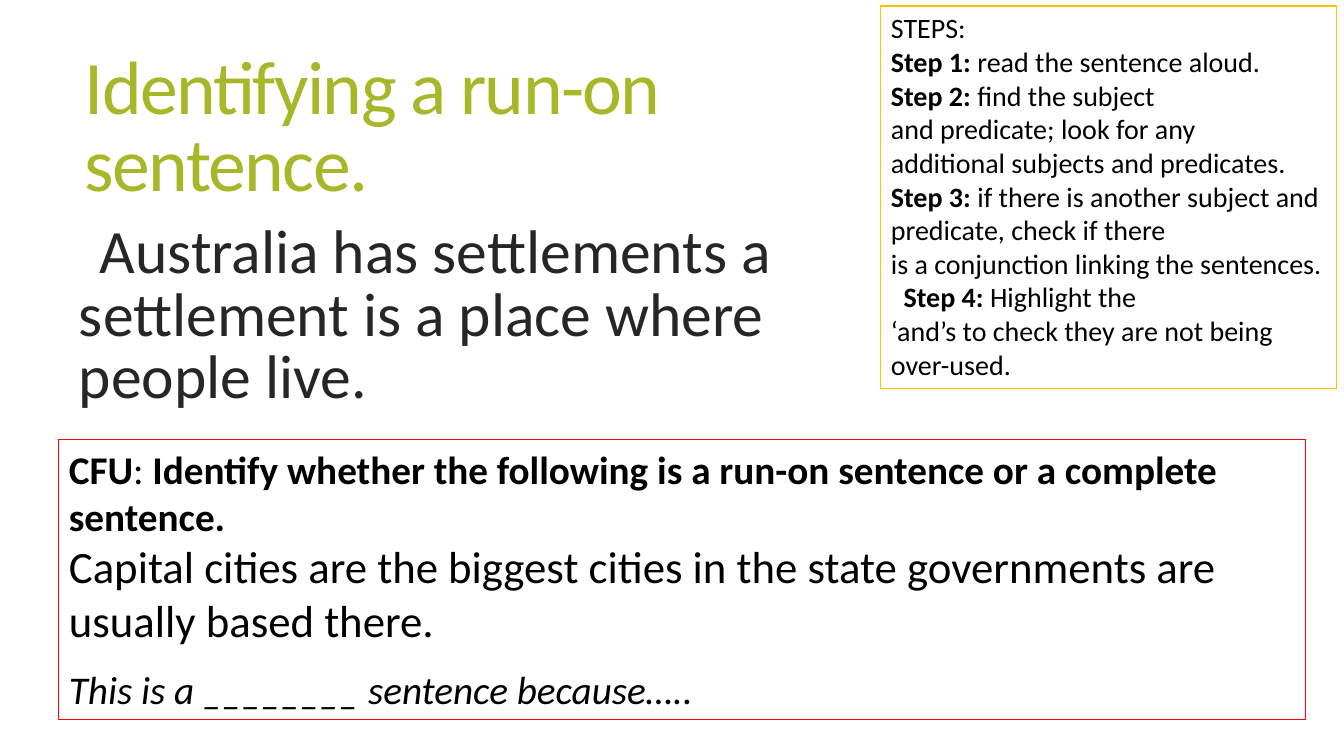
from lxml import etree
from pptx import Presentation
from pptx import util as u
from pptx.dml.color import RGBColor
from pptx.enum import shapes, text
from pptx.oxml import ns

PX = 914400 / 100.8
FONT = "Calibri"
NBSP = chr(160)
GREEN = RGBColor(0xA6, 0xB7, 0x27)
DARK = RGBColor(0x26, 0x26, 0x26)
BLACK = RGBColor(0x00, 0x00, 0x00)
AMBER = RGBColor(0xFF, 0xC0, 0x00)
RED = RGBColor(0xFF, 0x00, 0x00)

STEPS = [
    [("STEPS:", False)],
    [("Step 1:~", True), ("read the sentence aloud.~~", False)],
    [("Step 2:~", True),
     ("find the subject and~predicate;~look for~any additional~subjects and~predicates.~~", False)],
    [("Step~3:~", True),
     ("if~there~is~another~subject~and~predicate,~check if~there "
      "is~a~conjunction~linking~the~sentences.~~", False),
     ("Step 4:", True),
     ("~Highlight the ‘and’s~to~check~they are not being over-used.", False)],
]


def px(length):
    return u.Emu(round(length * PX))


def add_span(para, words, size, color, bold=False, italic=False):
    span = para.add_run()
    span.text = words.replace("~", NBSP)
    font = span.font
    font.name, font.size = FONT, u.Pt(size)
    font.bold, font.italic = bold, italic
    font.color.rgb = color
    return span


def next_para(frame):
    first = frame.paragraphs[0]
    para = frame.add_paragraph() if first.runs else first
    para.alignment = text.PP_ALIGN.LEFT
    return para


def add_text_area(page, area, anchor):
    frame = page.shapes.add_textbox(*map(px, area)).text_frame
    frame.word_wrap = True
    frame.vertical_anchor = anchor
    return frame


def add_panel(page, area, border):
    box = page.shapes.add_shape(shapes.MSO_SHAPE.RECTANGLE, *map(px, area))
    box.shadow.inherit = False
    box.fill.background()
    box.line.color.rgb = border
    box.line.width = u.Pt(0.75)
    frame = box.text_frame
    frame.word_wrap = True
    frame.vertical_anchor = text.MSO_ANCHOR.TOP
    frame.auto_size = text.MSO_AUTO_SIZE.SHAPE_TO_FIT_TEXT
    return frame


def add_title(page, area):
    para = next_para(add_text_area(page, area, text.MSO_ANCHOR.MIDDLE))
    para.line_spacing = 0.85
    span = add_span(para, "Identifying a run-on sentence.", 54, GREEN)
    span.font._element.set("spc", "-120")


def add_example(page, area):
    para = next_para(add_text_area(page, area, text.MSO_ANCHOR.TOP))
    para.line_spacing = 0.85
    para.space_before = u.Pt(13)
    add_span(para, "Australia has settlements a settlement is a place where people live.~", 44, DARK)
    props = para._p.get_or_add_pPr()
    props.set("marL", str(u.Inches(0.1)))
    props.set("indent", str(-u.Inches(0.1)))
    etree.SubElement(props, ns.qn("a:buChar")).set("char", " ")


def add_steps(page, area):
    frame = add_panel(page, area, AMBER)
    for step in STEPS:
        para = next_para(frame)
        for words, bold in step:
            add_span(para, words, 20, BLACK, bold)


def add_check(page, area):
    frame = add_panel(page, area, RED)
    task = next_para(frame)
    add_span(task, "CFU", 28, BLACK, bold=True)
    add_span(task, ": ", 28, BLACK)
    add_span(task, "Identify whether the following is a run-on sentence or a complete sentence.",
             28, BLACK, bold=True)
    add_span(next_para(frame),
             "Capital cities are the biggest cities in the state governments are usually based there.~",
             32, BLACK)
    answer = next_para(frame)
    answer.space_before = u.Pt(13.4)
    add_span(answer, "This is a ________ sentence because…..", 28, BLACK, italic=True)


def main():
    deck = Presentation()
    deck.slide_width, deck.slide_height = px(1344), px(756)
    page = deck.slides.add_slide(deck.slide_layouts[6])
    add_title(page, (75, 39, 805, 182))
    add_example(page, (59, 218, 814, 415))
    add_steps(page, (881, 6, 456, 383))
    add_check(page, (59, 440, 1247, 280))
    deck.save("out.pptx")


if __name__ == "__main__":
    main()
